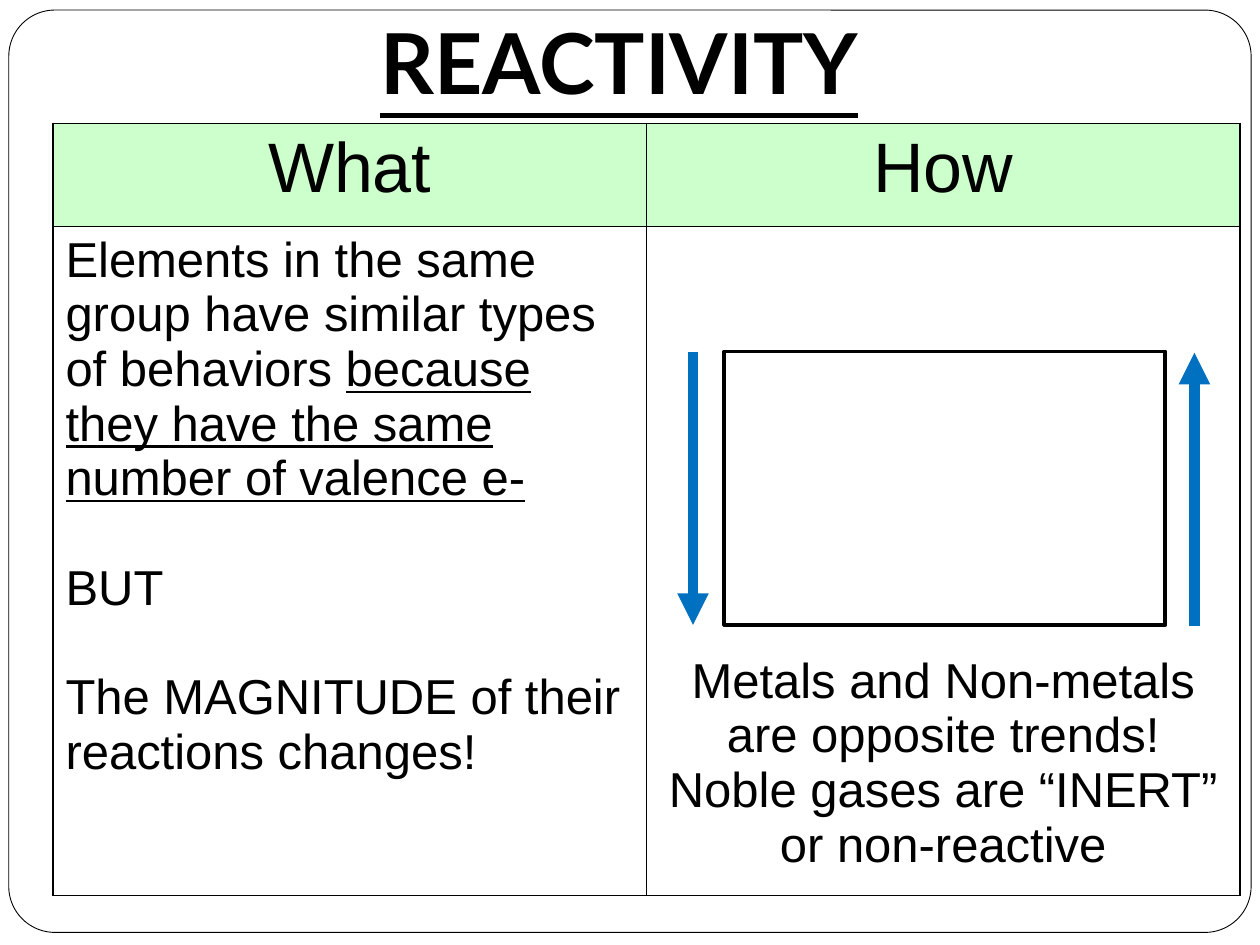
from lxml import etree
from pptx import Presentation
from pptx.dml.color import RGBColor
from pptx.enum import shapes, text
from pptx.oxml import ns
from pptx.util import Inches, Pt

BLACK, WHITE, MINT, BLUE = "000000", "FFFFFF", "CCFFCC", "0070C0"
CENTER, LEFT = text.PP_ALIGN.CENTER, text.PP_ALIGN.LEFT


def color(value):
    """Turn a hex string into a colour."""
    return RGBColor.from_string(value)


def style(paragraph, size, face="Arial", align=LEFT):
    """Set the font and alignment of a paragraph."""
    paragraph.alignment = align
    paragraph.font.size = Pt(size)
    paragraph.font.name = face
    paragraph.font.color.rgb = color(BLACK)


def add_outline(slide, kind, box, weight, fill=None):
    """Add a black outlined shape with an optional fill."""
    outline = slide.shapes.add_shape(kind, *map(Inches, box))
    outline.shadow.inherit = False
    outline.line.color.rgb = color(BLACK)
    outline.line.width = Pt(weight)
    if fill:
        outline.fill.solid()
        outline.fill.fore_color.rgb = color(fill)
    else:
        outline.fill.background()
    return outline


def add_title(slide, wording):
    """Add the underlined heading."""
    heading = slide.shapes.add_textbox(Inches(0.33), Inches(0.25), Inches(9.17), Inches(0.73))
    frame = heading.text_frame
    frame.word_wrap = True
    frame.vertical_anchor = text.MSO_ANCHOR.BOTTOM
    frame.margin_bottom = Inches(0.1)
    frame.text = wording
    style(frame.paragraphs[0], 48, "Lato", CENTER)
    frame.paragraphs[0].font.bold = True
    frame.paragraphs[0].font.underline = True


def add_borders(cell):
    """Draw a thin black border on every side of a cell."""
    properties = cell._tc.get_or_add_tcPr()
    for position, side in enumerate("LRTB"):
        border = etree.Element(ns.qn(f"a:ln{side}"), w=str(Pt(1)))
        fill = etree.SubElement(border, ns.qn("a:solidFill"))
        etree.SubElement(fill, ns.qn("a:srgbClr"), val=BLACK)
        properties.insert(position, border)


def fill_cell(cell, lines, size, align, fill=None, gap=0):
    """Write paragraphs into a bordered cell."""
    cell.text = "\n".join(lines)
    for index, paragraph in enumerate(cell.text_frame.paragraphs):
        style(paragraph, size, align=align)
        if index and gap:
            paragraph.space_before = Pt(gap)
    if fill:
        cell.fill.solid()
        cell.fill.fore_color.rgb = color(fill)
    else:
        cell.fill.background()
    add_borders(cell)


def add_reactivity_table(slide):
    """Add the two-column table of what happens and how."""
    table = slide.shapes.add_table(
        2, 2, Inches(0.42), Inches(0.98), Inches(9.42), Inches(6.1)).table
    table.horz_banding = False
    table.first_row = False
    table.rows[0].height = Inches(0.82)
    table.rows[1].height = Inches(5.28)
    for column, label in enumerate(("What", "How")):
        fill_cell(table.cell(0, column), [label], 40, CENTER, MINT)

    what, how = table.cell(1, 0), table.cell(1, 1)
    fill_cell(what, ["Elements in the same group have similar types of behaviors ",
                     "BUT", "The MAGNITUDE of their reactions changes!"], 28, LEFT, gap=31.3)
    reason = what.text_frame.paragraphs[0].add_run()
    reason.text = "because they have the same number of valence e-"
    reason.font.underline = True

    fill_cell(how, ["Metals and Non-metals are opposite trends!",
                    "Noble gases are “INERT” or non-reactive"], 28, CENTER)
    how.margin_top = Inches(3.39)


def add_trend_arrow(slide, x, start, end):
    """Add a thick vertical arrow."""
    arrow = slide.shapes.add_connector(
        shapes.MSO_CONNECTOR.STRAIGHT, Inches(x), Inches(start), Inches(x), Inches(end))
    arrow.line.color.rgb = color(BLUE)
    arrow.line.width = Pt(6)
    etree.SubElement(arrow.line._get_or_add_ln(), ns.qn("a:tailEnd"), type="triangle")
    etree.SubElement(arrow._element.spPr, ns.qn("a:effectLst"))


def main():
    """Build and save the slide."""
    deck = Presentation()
    deck.slide_width, deck.slide_height = Inches(10), Inches(7.5)
    slide = deck.slides.add_slide(deck.slide_layouts[6])
    frame = add_outline(slide, shapes.MSO_SHAPE.ROUNDED_RECTANGLE,
                        (0.07, 0.08, 9.86, 7.32), 0.5, WHITE)
    frame.adjustments[0] = 0.05
    add_title(slide, "REACTIVITY")
    add_reactivity_table(slide)
    add_outline(slide, shapes.MSO_SHAPE.RECTANGLE, (5.75, 2.79, 3.5, 2.17), 2.25)
    add_trend_arrow(slide, 5.5, 2.79, 4.96)
    add_trend_arrow(slide, 9.48, 4.97, 2.8)
    deck.save("out.pptx")


if __name__ == "__main__":
    main()
